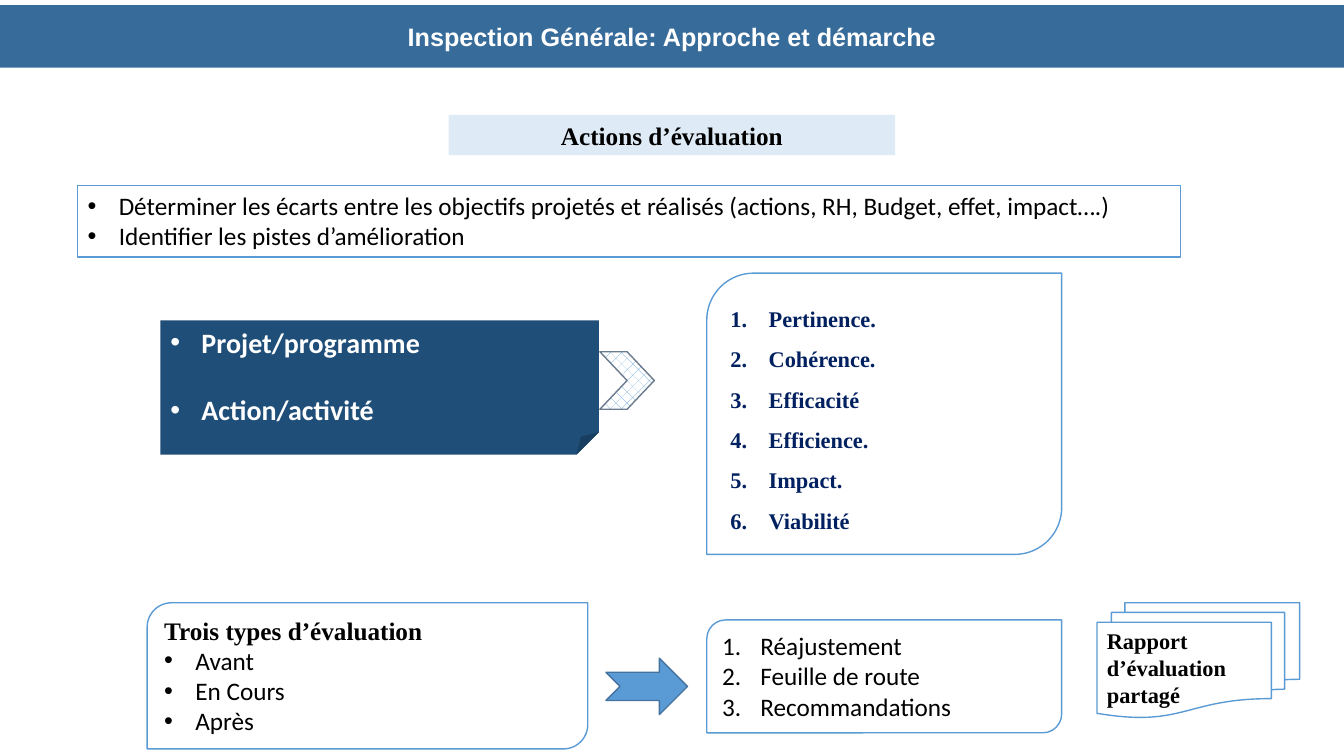
"""Build the slide on the evaluation actions of the general inspection."""
from dataclasses import dataclass

from lxml import etree
from pptx import Presentation, slide, util as u
from pptx.dml import color
from pptx.enum import dml, shapes, text
from pptx.oxml import ns

COLORS = {
    "banner": "366B9A", "navy": "1F4E79", "pale": "DEEBF7", "blue": "5B9BD5",
    "arrow_line": "43739E", "chevron_line": "6A7B8E", "list": "002060",
    "white": "FFFFFF", "black": "000000",
}
SHAPE = shapes.MSO_SHAPE
TIMES = "Times New Roman"
BULLET, NUMBER = "bullet", "number"
INDENTS = {BULLET: 0.31, NUMBER: 0.38}


@dataclass
class Line:
    text: str
    font: str = "Calibri"
    size: int = 18
    bold: bool = False
    color: str = "black"
    marker: str = ""
    spacing: float = 1.0
    before: int = 0


@dataclass
class Box:
    kind: shapes.MSO_SHAPE
    at: tuple[float, float, float, float]
    fill: str = "white"
    line: str = "blue"
    lines: tuple[Line, ...] = ()
    centred: bool = False
    middle: bool = False
    pattern: bool = False


def rgb(name: str) -> color.RGBColor:
    return color.RGBColor.from_string(COLORS[name])


def listed(*items: str, marker: str = BULLET, **style) -> tuple[Line, ...]:
    return tuple(Line(item, marker=marker, **style) for item in items)


def add_marker(p, marker: str) -> None:
    pPr = p._p.get_or_add_pPr()
    indent = u.Inches(INDENTS[marker])
    pPr.set("marL", str(indent))
    pPr.set("indent", str(-indent))
    if marker == BULLET:
        etree.SubElement(pPr, ns.qn("a:buFont"), typeface="Arial")
        etree.SubElement(pPr, ns.qn("a:buChar"), char="•")
    else:
        etree.SubElement(pPr, ns.qn("a:buAutoNum"), type="arabicPeriod")


def write_lines(tf, box: Box) -> None:
    tf.word_wrap = True
    tf.vertical_anchor = text.MSO_ANCHOR.MIDDLE if box.middle else text.MSO_ANCHOR.TOP
    if not box.middle:
        tf.auto_size = text.MSO_AUTO_SIZE.SHAPE_TO_FIT_TEXT
    for i, line in enumerate(box.lines):
        p = tf.add_paragraph() if i else tf.paragraphs[0]
        p.text = line.text
        p.alignment = text.PP_ALIGN.CENTER if box.centred else text.PP_ALIGN.LEFT
        p.line_spacing = line.spacing
        p.space_before = u.Pt(line.before)
        if line.marker:
            add_marker(p, line.marker)
        for r in p.runs:
            r.font.name = line.font
            r.font.size = u.Pt(line.size)
            r.font.bold = line.bold
            r.font.color.rgb = rgb(line.color)


def draw_box(s: slide.Slide, box: Box) -> None:
    sp = s.shapes.add_shape(box.kind, *map(u.Inches, box.at))
    sp.shadow.inherit = False
    if box.pattern:
        sp.fill.patterned()
        sp.fill.pattern = dml.MSO_PATTERN.PERCENT_25
        sp.fill.fore_color.rgb = rgb(box.fill)
        sp.fill.back_color.rgb = rgb("white")
    else:
        sp.fill.solid()
        sp.fill.fore_color.rgb = rgb(box.fill)
    if box.line:
        sp.line.color.rgb = rgb(box.line)
        sp.line.width = u.Pt(1)
    else:
        sp.line.fill.background()
    if box.lines:
        write_lines(sp.text_frame, box)


PROJECT = dict(size=20, bold=True, color="white")
BOXES = (
    Box(SHAPE.FOLDED_CORNER, (1.59, 3.18, 4.35, 1.33), "navy", "",
        listed("Projet/programme", **PROJECT)
        + listed("Action/activité", before=24, **PROJECT)),
    Box(SHAPE.RECTANGLE, (0, 0.05, 13.33, 0.62), "banner", "",
        (Line("Inspection Générale: Approche et démarche", "Arial",
              bold=True, color="white"),), centred=True, middle=True),
    Box(SHAPE.RECTANGLE, (4.45, 1.14, 4.43, 0.4), "pale", "",
        (Line("Actions d’évaluation", TIMES, bold=True),), centred=True),
    Box(SHAPE.ROUND_2_DIAG_RECTANGLE, (7.01, 2.71, 3.52, 2.79),
        lines=listed("Pertinence.", "Cohérence.", "Efficacité", "Efficience.",
                     "Impact.", "Viabilité", marker=NUMBER, font=TIMES, size=16,
                     bold=True, color="list", spacing=1.5)),
    Box(SHAPE.CHEVRON, (5.95, 3.49, 0.54, 0.57), "blue", "chevron_line", pattern=True),
    Box(SHAPE.ROUND_2_DIAG_RECTANGLE, (1.46, 5.98, 4.37, 1.45),
        lines=(Line("Trois types d’évaluation", TIMES, bold=True),)
        + listed("Avant", "En Cours", "Après")),
    Box(SHAPE.NOTCHED_RIGHT_ARROW, (6.01, 6.53, 0.81, 0.56), "blue", "arrow_line"),
    Box(SHAPE.ROUND_2_DIAG_RECTANGLE, (7.01, 6.15, 3.52, 1.12),
        lines=listed("Réajustement", "Feuille de route", "Recommandations",
                     marker=NUMBER)),
    Box(SHAPE.RECTANGLE, (0.77, 1.84, 10.94, 0.71),
        lines=listed("Déterminer les écarts entre les objectifs projetés et réalisés "
                     "(actions, RH, Budget, effet, impact….)",
                     "Identifier les pistes d’amélioration")),
    Box(SHAPE.FLOWCHART_MULTIDOCUMENT, (10.88, 5.98, 2.01, 1.14),
        lines=(Line("Rapport d’évaluation partagé", TIMES, 16, True),)),
)


def main() -> None:
    prs = Presentation()
    prs.slide_width, prs.slide_height = u.Inches(13.33), u.Inches(7.5)
    s = prs.slides.add_slide(prs.slide_layouts[6])
    for box in BOXES:
        draw_box(s, box)
    prs.save("out.pptx")


if __name__ == "__main__":
    main()
